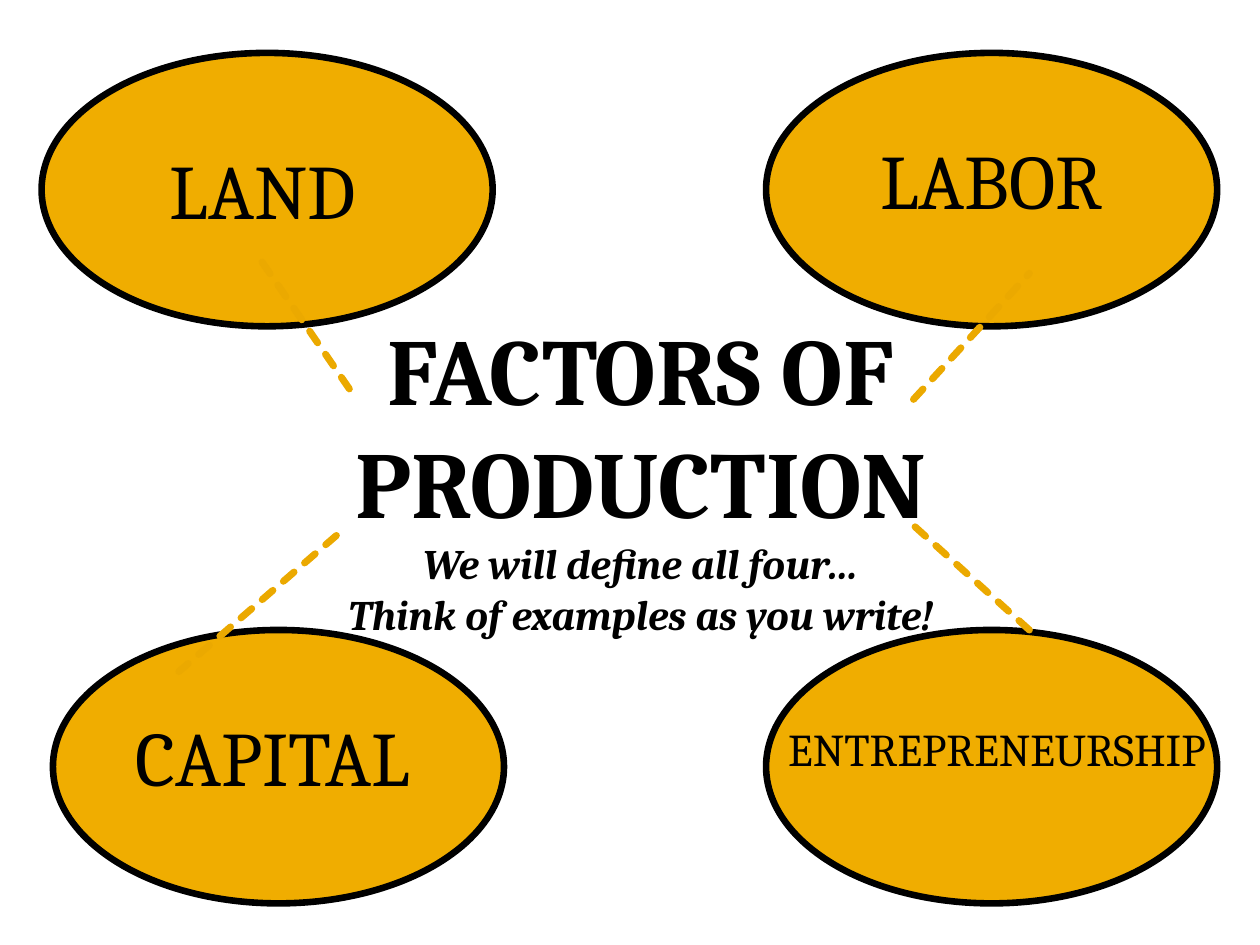
from lxml.etree import SubElement
from pptx import Presentation
from pptx.dml.color import RGBColor
from pptx.enum.dml import MSO_LINE
from pptx.enum.shapes import MSO_CONNECTOR, MSO_SHAPE
from pptx.enum.text import MSO_AUTO_SIZE, PP_ALIGN
from pptx.oxml.ns import qn
from pptx.util import Inches, Pt

COLORS = {"gold": "F0AD00", "dash": "EBA900", "black": "000000"}

deck = Presentation()
deck.slide_width, deck.slide_height = Inches(10), Inches(7.5)
slide = deck.slides.add_slide(deck.slide_layouts[6])
shapes = slide.shapes


def color(name):
    return RGBColor.from_string(COLORS[name])


def write(frame, text, size=44, bold=False, italic=False, first=True):
    para = frame.paragraphs[0] if first else frame.add_paragraph()
    para.alignment = PP_ALIGN.CENTER
    run = para.add_run()
    run.text = text
    font = run.font
    font.name, font.size = "Cambria", Pt(size)
    font.bold, font.italic = bold, italic
    font.color.rgb = color("black")


box = shapes.add_textbox(Inches(2.42), Inches(2.42), Inches(5.33), Inches(2.73))
title = box.text_frame
title.word_wrap = True
title.auto_size = MSO_AUTO_SIZE.SHAPE_TO_FIT_TEXT
write(title, "FACTORS OF PRODUCTION", size=54, bold=True)
for text in ("We will define all four…", "Think of examples as you write!"):
    write(title, text, size=24, bold=True, italic=True, first=False)

for left, top in ((0.33, 0.42), (6.08, 5), (0.42, 5), (6.08, 0.42)):
    oval = shapes.add_shape(
        MSO_SHAPE.OVAL, Inches(left), Inches(top), Inches(3.58), Inches(2.17))
    oval.shadow.inherit = False
    oval.fill.solid()
    oval.fill.fore_color.rgb = color("gold")
    oval.line.color.rgb = color("black")
    oval.line.width = Pt(3.78)

for ends in ((2.08, 2.08, 2.83, 3.17), (2.67, 4.25, 1.42, 5.33),
             (7.25, 3.17, 8.17, 2.17), (8.17, 5, 7.25, 4.17)):
    link = shapes.add_connector(MSO_CONNECTOR.STRAIGHT, *map(Inches, ends))
    link.line.color.rgb = color("dash")
    link.line.width = Pt(4)
    link.line.dash_style = MSO_LINE.SQUARE_DOT
    link.line._get_or_add_ln().set("cap", "rnd")
    SubElement(link._element.spPr, qn("a:effectLst"))

labels = (
    ("LAND", 0.75, 1.08, 2.67, 0.84, 44),
    ("LABOR", 6.33, 1, 3.08, 0.84, 44),
    ("CAPITAL", 0.5, 5.58, 3.33, 0.84, 44),
    ("ENTREPRENEURSHIP", 5.83, 5.67, 4.17, 0.54, 26),
)
for text, left, top, width, height, size in labels:
    box = shapes.add_textbox(
        Inches(left), Inches(top), Inches(width), Inches(height))
    frame = box.text_frame
    frame.word_wrap = True
    frame.auto_size = MSO_AUTO_SIZE.SHAPE_TO_FIT_TEXT
    write(frame, text, size=size)

deck.save("out.pptx")
